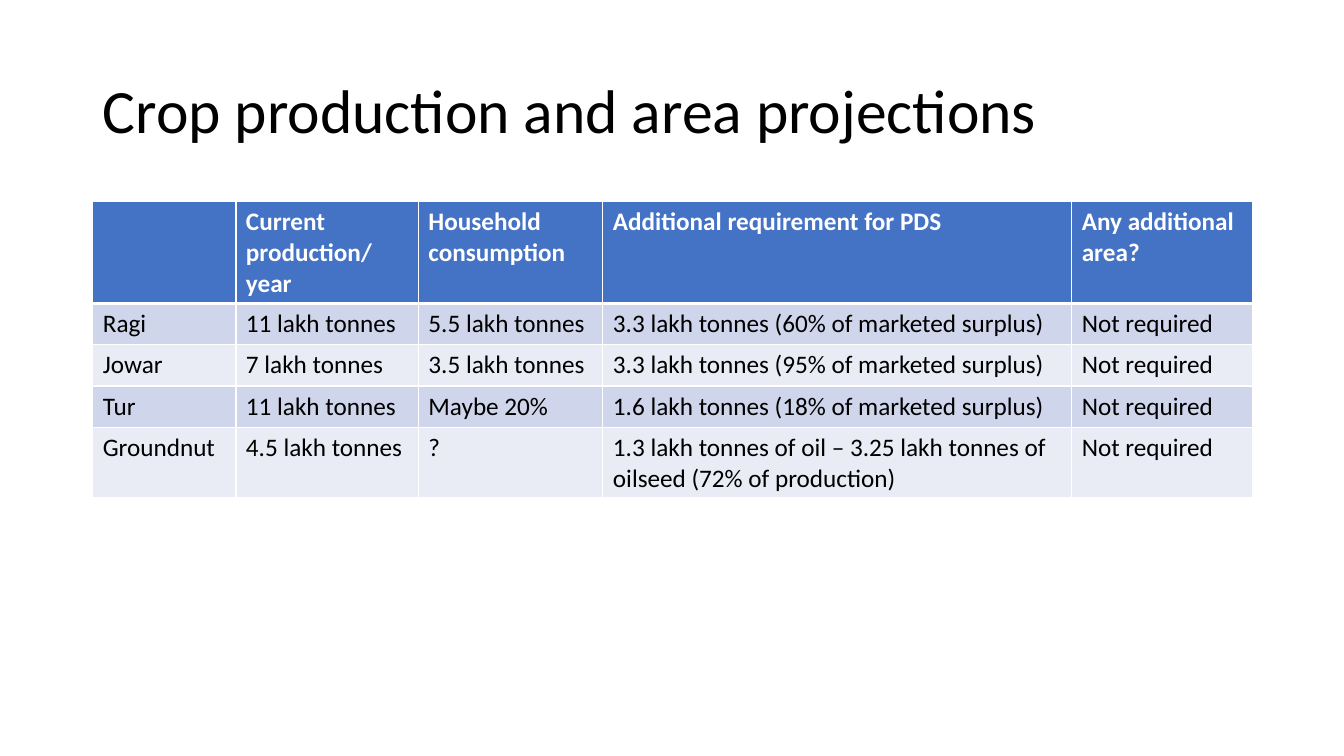
"""Build the slide on crop production and area projections."""
import pptx
import pptx.dml.color
import pptx.enum.text
import pptx.oxml
import pptx.oxml.ns
import pptx.util
from pptx.util import Inches

TITLE = "Crop production and area projections"
HEADINGS = ("", "Current production/ year", "Household consumption",
            "Additional requirement for PDS", "Any additional area?")
CROPS = [
    ("Ragi", "11 lakh tonnes", "5.5 lakh tonnes",
     "3.3 lakh tonnes (60% of marketed surplus)", "Not required"),
    ("Jowar", "7 lakh tonnes", "3.5 lakh tonnes",
     "3.3 lakh tonnes (95% of marketed surplus)", "Not required"),
    ("Tur", "11 lakh tonnes", "Maybe 20%",
     "1.6 lakh tonnes (18% of marketed surplus)", "Not required"),
    ("Groundnut", "4.5 lakh tonnes", "?",
     "1.3 lakh tonnes of oil – 3.25 lakh tonnes of oilseed (72% of production)",
     "Not required"),
]
COLUMN_WIDTHS = (1.42, 1.81, 1.83, 4.65, 1.79)
ROW_HEIGHTS = (1.01, 0.41, 0.41, 0.41, 0.7)
LEFT, WIDTH = 0.92, 11.5
HEADER_FILL = "4472C4"
BAND_FILLS = ("CFD5EA", "E9EBF5")
WHITE, BLACK = "FFFFFF", "000000"


def rgb(color):
    return pptx.dml.color.RGBColor.from_string(color)


def style_font(paragraph, size, color, bold=False):
    font = paragraph.font
    font.name, font.size, font.bold = "Calibri", pptx.util.Pt(size), bold
    font.color.rgb = rgb(color)


def add_border(cell, side, points):
    cell._tc.get_or_add_tcPr().append(pptx.oxml.parse_xml(
        f'<a:{side} {pptx.oxml.ns.nsdecls("a")} w="{pptx.util.Pt(points)}">'
        f'<a:solidFill><a:srgbClr val="{WHITE}"/></a:solidFill></a:{side}>'))


def add_title(slide):
    frame = slide.shapes.add_textbox(
        Inches(LEFT), Inches(0.4), Inches(WIDTH), Inches(1.45)).text_frame
    frame.word_wrap = True
    frame.vertical_anchor = pptx.enum.text.MSO_ANCHOR.MIDDLE
    heading = frame.paragraphs[0]
    heading.text = TITLE
    heading.line_spacing = 0.9
    style_font(heading, 44, BLACK)


def add_crop_table(slide):
    rows = [HEADINGS] + CROPS
    table = slide.shapes.add_table(
        len(rows), len(HEADINGS), Inches(LEFT), Inches(2),
        Inches(WIDTH), Inches(sum(ROW_HEIGHTS))).table
    for column, width in zip(table.columns, COLUMN_WIDTHS):
        column.width = Inches(width)
    for r, (row, height) in enumerate(zip(rows, ROW_HEIGHTS)):
        table.rows[r].height = Inches(height)
        is_header = r == 0
        fill = HEADER_FILL if is_header else BAND_FILLS[(r - 1) % 2]
        for c, words in enumerate(row):
            cell = table.cell(r, c)
            cell.text = words
            style_font(cell.text_frame.paragraphs[0], 18,
                       WHITE if is_header else BLACK, is_header)
            for side in ("lnL", "lnR", "lnT", "lnB"):
                under_header = (r, side) in ((0, "lnB"), (1, "lnT"))
                add_border(cell, side, 3 if under_header else 1)
            cell.fill.solid()
            cell.fill.fore_color.rgb = rgb(fill)


def main():
    deck = pptx.Presentation()
    deck.slide_width, deck.slide_height = Inches(13.33), Inches(7.5)
    slide = deck.slides.add_slide(deck.slide_layouts[6])
    add_title(slide)
    add_crop_table(slide)
    deck.save("out.pptx")


if __name__ == "__main__":
    main()
